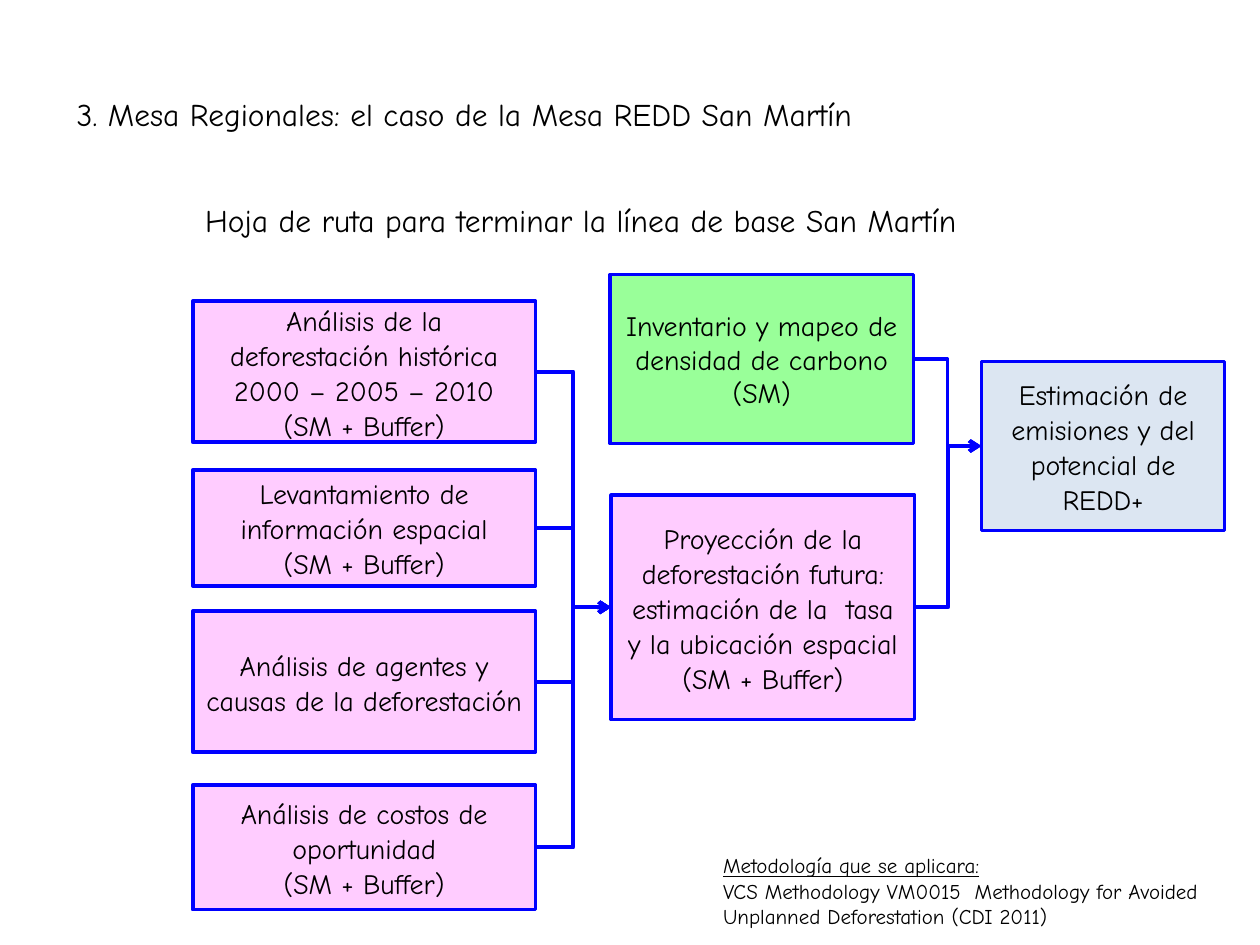
"""Build the San Martín baseline roadmap slide."""
import dataclasses

import lxml.etree
import pptx
import pptx.dml.color
import pptx.enum.shapes
import pptx.enum.text
import pptx.oxml.ns
import pptx.util

Inches = pptx.util.Inches
RIGHT_SIDE, LEFT_SIDE = 3, 1


@dataclasses.dataclass(frozen=True)
class Theme:
    font: str = "Comic Neue"
    text: str = "000000"
    line: str = "0000FF"
    pink: str = "FFCCFF"
    green: str = "99FF99"
    blue: str = "DCE6F2"
    heading_size: int = 18
    box_size: int = 16
    note_size: int = 12
    box_spacing: int = 20
    box_line: float = 2
    connector_line: float = 2.25


class SlideBuilder:
    def __init__(self, slide, theme):
        self.slide = slide
        self.theme = theme

    def color(self, value):
        return pptx.dml.color.RGBColor.from_string(value)

    def fill_text(self, frame, paragraphs, size, anchor, alignment=None, spacing=None, underlined=()):
        frame.word_wrap = True
        frame.vertical_anchor = anchor
        for index, text in enumerate(paragraphs):
            paragraph = frame.paragraphs[0] if index == 0 else frame.add_paragraph()
            paragraph.alignment = alignment
            if spacing:
                paragraph.line_spacing = pptx.util.Pt(spacing)
            run = paragraph.add_run()
            run.text = text
            run.font.name = self.theme.font
            run.font.size = pptx.util.Pt(size)
            run.font.color.rgb = self.color(self.theme.text)
            if index in underlined:
                run.font.underline = True

    def text(self, bounds, paragraphs, size, anchor=pptx.enum.text.MSO_ANCHOR.TOP, underlined=()):
        shape = self.slide.shapes.add_textbox(*map(Inches, bounds))
        self.fill_text(shape.text_frame, paragraphs, size, anchor, underlined=underlined)

    def box(self, bounds, paragraphs, fill, spacing=Theme.box_spacing):
        shape = self.slide.shapes.add_shape(
            pptx.enum.shapes.MSO_SHAPE.RECTANGLE, *map(Inches, bounds))
        shape.shadow.inherit = False
        shape.fill.solid()
        shape.fill.fore_color.rgb = self.color(fill)
        shape.line.color.rgb = self.color(self.theme.line)
        shape.line.width = pptx.util.Pt(self.theme.box_line)
        self.fill_text(shape.text_frame, paragraphs, self.theme.box_size,
                       pptx.enum.text.MSO_ANCHOR.MIDDLE,
                       pptx.enum.text.PP_ALIGN.CENTER, spacing)
        return shape

    def arrow(self, source, target):
        connector = self.slide.shapes.add_connector(
            pptx.enum.shapes.MSO_CONNECTOR.ELBOW,
            source.left + source.width, source.top + source.height // 2,
            target.left, target.top + target.height // 2)
        connector.begin_connect(source, RIGHT_SIDE)
        connector.end_connect(target, LEFT_SIDE)
        connector.line.color.rgb = self.color(self.theme.line)
        connector.line.width = pptx.util.Pt(self.theme.connector_line)
        qualified = pptx.oxml.ns.qn
        properties = connector._element.spPr
        line = properties.find(qualified("a:ln"))
        lxml.etree.SubElement(line, qualified("a:tailEnd"), type="arrow")
        lxml.etree.SubElement(properties, qualified("a:effectLst"))


def main():
    presentation = pptx.Presentation()
    presentation.slide_width = Inches(10)
    presentation.slide_height = Inches(7.5)
    theme = Theme()
    builder = SlideBuilder(presentation.slides.add_slide(presentation.slide_layouts[6]), theme)

    builder.text((0.51, 0.6, 8.99, 0.61),
                 ["3. Mesa Regionales: el caso de la Mesa REDD San Martín"],
                 theme.heading_size, pptx.enum.text.MSO_ANCHOR.MIDDLE)
    builder.text((1.53, 1.55, 6.93, 0.4),
                 ["Hoja de ruta para terminar la línea de base San Martín"],
                 theme.heading_size)
    builder.text((5.64, 6.72, 4.33, 0.75),
                 ["Metodología que se aplicara:",
                  "VCS Methodology VM0015  Methodology for Avoided Unplanned Deforestation (CDI 2011)"],
                 theme.note_size, underlined=(0,))

    scope = "(SM + Buffer)"
    analyses = [
        (2.39, 1.12, ["Análisis de la deforestación histórica 2000 – 2005 – 2010", scope]),
        (3.73, 0.92, ["Levantamiento de información espacial", scope]),
        (4.85, 1.12, ["Análisis de agentes y causas de la deforestación"]),
        (6.23, 0.99, ["Análisis de costos de oportunidad", scope]),
    ]
    inventory = builder.box((4.84, 2.18, 2.41, 1.34),
                            ["Inventario y mapeo de densidad de carbono (SM)"],
                            theme.green, spacing=None)
    projection = builder.box(
        (4.85, 3.93, 2.41, 1.78),
        ["Proyección de la deforestación futura: estimación de la  tasa y la ubicación espacial", scope],
        theme.pink)
    estimate = builder.box((7.79, 2.87, 1.93, 1.34),
                           ["Estimación de emisiones y del potencial de REDD+"], theme.blue)

    for top, height, paragraphs in analyses:
        analysis = builder.box((1.53, top, 2.72, height), paragraphs, theme.pink)
        builder.arrow(analysis, projection)
    for source in (inventory, projection):
        builder.arrow(source, estimate)

    presentation.save("out.pptx")


if __name__ == "__main__":
    main()
